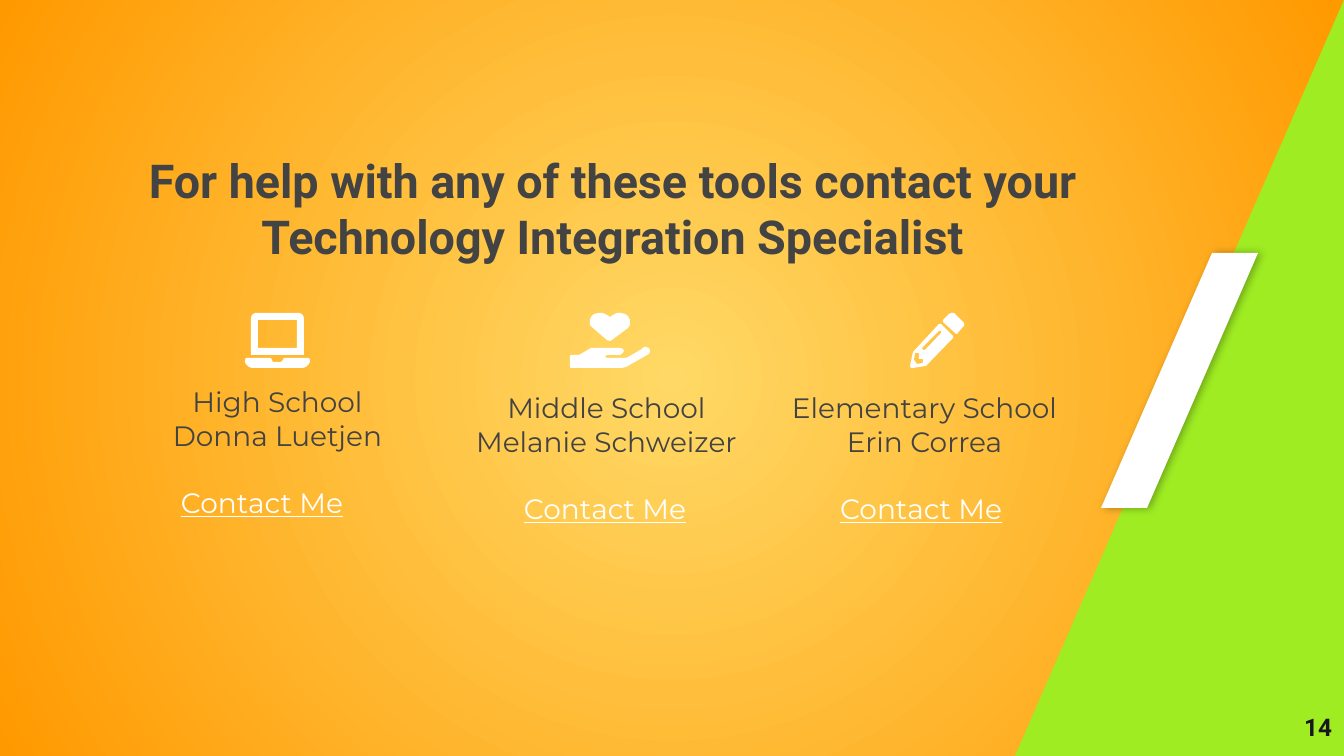
from dataclasses import dataclass

from pptx import Presentation
from pptx.dml.color import RGBColor
from pptx.enum.text import MSO_ANCHOR, MSO_AUTO_SIZE, PP_ALIGN
from pptx.oxml import parse_xml
from pptx.oxml.ns import nsdecls, qn
from pptx.util import Pt

PX = 914400 / 134.4
PAGE_WIDTH, PAGE_HEIGHT = 1344, 756

YELLOW = RGBColor(0xFF, 0xD9, 0x66)
ORANGE = RGBColor(0xFF, 0x99, 0x00)
GREEN = RGBColor(0x9F, 0xEC, 0x23)
WHITE = RGBColor(0xFF, 0xFF, 0xFF)
GREY = RGBColor(0x43, 0x43, 0x43)
INK = RGBColor(0x18, 0x17, 0x1D)

Contour = list[tuple[int, int]]


@dataclass
class Contact:
    school: str
    name: str
    left: int
    top: int
    width: int
    link_indent: int
    icon: list[Contour]


LAPTOP = [
    # Screen frame, screen, base
    [(255, 313), (252, 315), (251, 318), (251, 355), (304, 355), (304, 318),
     (303, 315), (300, 313)],
    [(297, 320), (297, 348), (258, 348), (258, 320)],
    [(246, 358), (245, 360), (245, 362), (246, 364), (249, 367), (252, 368),
     (303, 368), (306, 367), (309, 364), (310, 362), (310, 359), (308, 358),
     (284, 358), (283, 360), (281, 362), (273, 362), (272, 360), (271, 358)],
]
HEART_IN_HAND = [
    # Heart, hand
    [(599, 313), (594, 314), (591, 317), (590, 320), (590, 325), (593, 328),
     (607, 340), (610, 341), (612, 340), (628, 328), (630, 325), (630, 320),
     (628, 316), (625, 314), (621, 313), (617, 313), (613, 315), (610, 317),
     (607, 315), (603, 313)],
    [(597, 348), (591, 348), (586, 351), (579, 355), (571, 355), (570, 356),
     (570, 367), (571, 368), (622, 368), (626, 367), (628, 366), (649, 354),
     (650, 352), (650, 350), (649, 348), (646, 347), (644, 347), (642, 349),
     (630, 356), (626, 358), (607, 358), (605, 356), (607, 355), (620, 355),
     (623, 353), (624, 351), (623, 349), (621, 348)],
]
PENCIL = [
    # Eraser, barrel, slot, nib
    [(951, 313), (949, 314), (943, 320), (943, 322), (956, 334), (957, 334),
     (962, 328), (964, 326), (964, 323), (962, 321), (956, 315), (954, 313)],
    [(939, 324), (913, 352), (910, 366), (911, 368), (913, 368), (926, 366),
     (953, 338), (953, 336), (941, 324)],
    [(941, 331), (941, 333), (925, 350), (923, 350), (922, 348), (939, 331)],
    [(919, 353), (919, 359), (923, 359), (923, 363), (917, 364), (914, 360),
     (915, 353)],
]
CONTACTS = [
    Contact("High School", "Donna Luetjen", 144, 385, 267, 37, LAPTOP),
    Contact("Middle School", "Melanie Schweizer", 473, 391, 267, 51, HEART_IN_HAND),
    Contact("Elementary School", "Erin Correa", 766, 391, 317, 74, PENCIL),
]
CONTACT_HEIGHT = 195


def px(length: int) -> int:
    return round(length * PX)


def draw_outline(page, contours: list[Contour], color: RGBColor):
    first, *others = contours
    builder = page.shapes.build_freeform(*first[0], scale=PX)
    builder.add_line_segments(first[1:], close=True)
    for contour in others:
        builder.move_to(*contour[0])
        builder.add_line_segments(contour[1:], close=True)
    shape = builder.convert_to_shape()
    shape.shadow.inherit = False
    shape.fill.solid()
    shape.fill.fore_color.rgb = color
    shape.line.fill.background()
    return shape


def place(box, left: int, top: int, width: int, height: int, anchor=MSO_ANCHOR.TOP):
    box.left, box.top, box.width, box.height = map(px, (left, top, width, height))
    frame = box.text_frame
    frame.margin_left = frame.margin_top = frame.margin_right = frame.margin_bottom = 0
    frame.word_wrap = True
    frame.auto_size = MSO_AUTO_SIZE.NONE
    frame.vertical_anchor = anchor
    return frame


def style(para, face: str, size: int, color: RGBColor, align, bold: bool = False) -> None:
    para.alignment = align
    for span in para.runs:
        span.font.name = face
        span.font.size = Pt(size)
        span.font.color.rgb = color
        span.font.bold = bold


def draw_contact(page, contact: Contact) -> None:
    box = page.shapes.add_textbox(0, 0, 0, 0)
    frame = place(box, contact.left, contact.top, contact.width, CONTACT_HEIGHT)
    frame.text = f"{contact.school}\n{contact.name}\nContact Me"
    school, name, link = frame.paragraphs
    for para in (school, name):
        style(para, "Montserrat", 15, GREY, PP_ALIGN.CENTER)
    style(link, "Montserrat", 15, WHITE, PP_ALIGN.LEFT)
    link.runs[0].font.underline = True
    link.space_before = Pt(18)
    link._p.get_or_add_pPr().set("marL", str(px(contact.link_indent)))
    draw_outline(page, contact.icon, WHITE)


def paint_background(page) -> None:
    fill = page.background.fill
    fill.gradient()
    for stop, color in zip(fill.gradient_stops, (YELLOW, ORANGE)):
        stop.color.rgb = color
    gradient = page._element.find(".//" + qn("a:gradFill"))
    gradient.remove(gradient.find(qn("a:lin")))
    gradient.append(parse_xml(
        f'<a:path {nsdecls("a")} path="circle">'
        '<a:fillToRect l="50000" t="50000" r="50000" b="50000"/></a:path>'))


def main() -> None:
    deck = Presentation()
    deck.slide_width, deck.slide_height = px(PAGE_WIDTH), px(PAGE_HEIGHT)
    page = deck.slides.add_slide(deck.slide_layouts[5])

    # Background, green corner and white slash
    paint_background(page)
    draw_outline(page, [[(1015, 756), (1344, 0), (1344, 756)]], GREEN)
    slash = draw_outline(
        page, [[(1212, 253), (1101, 508), (1147, 508), (1258, 253)]], WHITE)
    slash._element.spPr.find(qn("a:effectLst")).append(parse_xml(
        f'<a:outerShdw {nsdecls("a")} blurRad="{Pt(4.5)}" dist="{Pt(1.5)}" dir="0">'
        '<a:srgbClr val="000000"><a:alpha val="30000"/></a:srgbClr></a:outerShdw>'))

    # Title
    frame = place(page.shapes.title, 103, 152, 1019, 105)
    frame.text = ("For help with any of these tools contact your "
                  "Technology Integration Specialist")
    style(frame.paragraphs[0], "Roboto", 25, GREY, PP_ALIGN.CENTER, bold=True)

    # Contacts with their icons
    for contact in CONTACTS:
        draw_contact(page, contact)

    # Page number
    number = page.shapes.add_textbox(0, 0, 0, 0)
    frame = place(number, 1251, 698, 81, 58, MSO_ANCHOR.MIDDLE)
    frame.text = "14"
    style(frame.paragraphs[0], "Roboto", 13, INK, PP_ALIGN.RIGHT, bold=True)

    deck.save("out.pptx")


if __name__ == "__main__":
    main()
